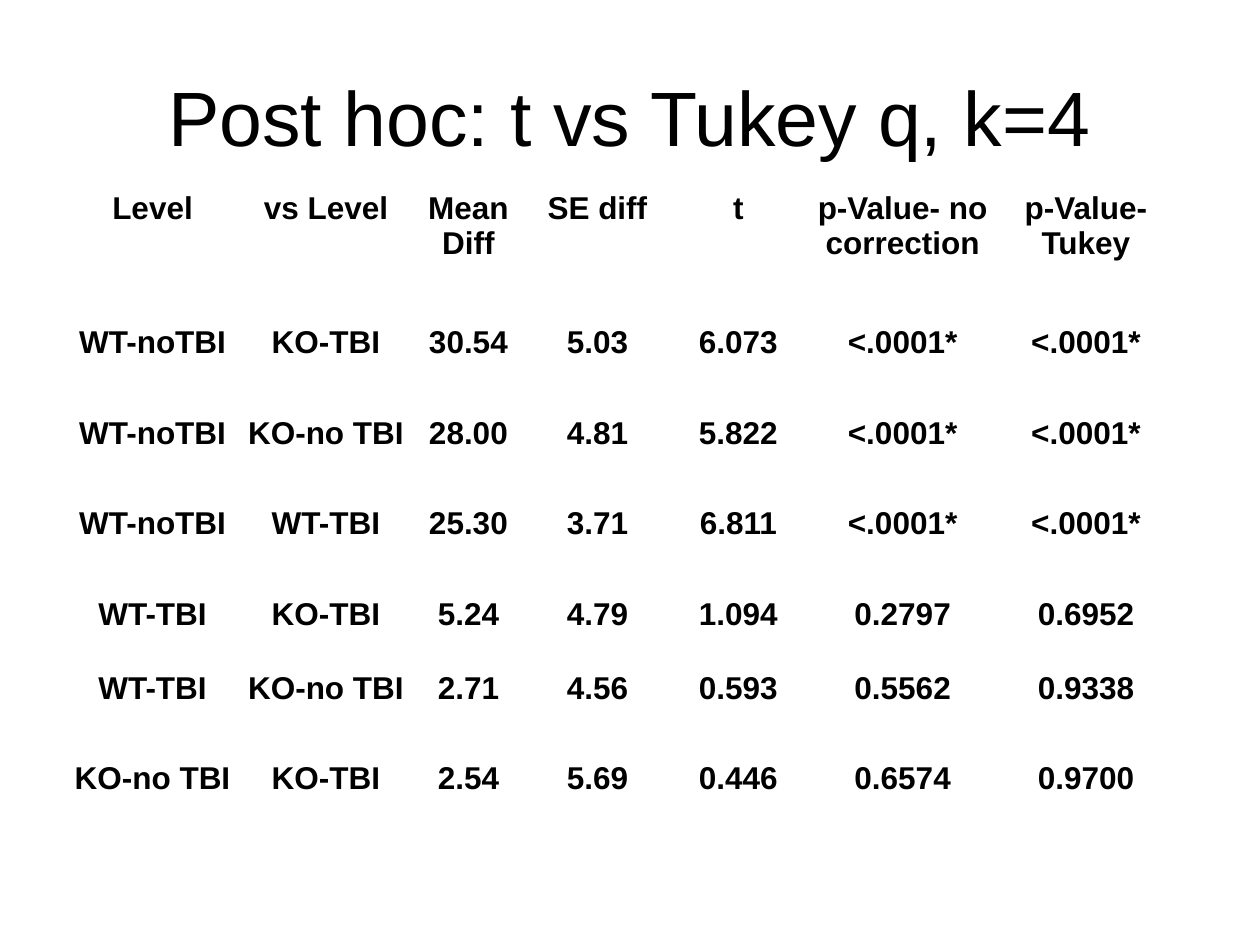
from pptx import Presentation
from pptx.dml.color import RGBColor
from pptx.enum.text import MSO_ANCHOR, PP_ALIGN
from pptx.util import Cm, Pt

BLACK = "000000"
COLUMN_WIDTHS = [3.61, 3.38, 2.36, 2.84, 2.84, 3.78, 3.61]
ROW_HEIGHTS = [2.72, 1.83, 1.83, 1.83, 1.5, 1.83, 1.83]
COMPARISONS = [
    ["Level", "vs Level", "Mean Diff", "SE diff", "t",
     "p-Value- no correction", "p-Value-Tukey"],
    ["WT-noTBI", "KO-TBI", "30.54", "5.03", "6.073", "<.0001*", "<.0001*"],
    ["WT-noTBI", "KO-no TBI", "28.00", "4.81", "5.822", "<.0001*", "<.0001*"],
    ["WT-noTBI", "WT-TBI", "25.30", "3.71", "6.811", "<.0001*", "<.0001*"],
    ["WT-TBI", "KO-TBI", "5.24", "4.79", "1.094", "0.2797", "0.6952"],
    ["WT-TBI", "KO-no TBI", "2.71", "4.56", "0.593", "0.5562", "0.9338"],
    ["KO-no TBI", "KO-TBI", "2.54", "5.69", "0.446", "0.6574", "0.9700"],
]


def color(hex_value):
    return RGBColor.from_string(hex_value)


def write_centred(text_frame, text, size, bold=False):
    text_frame.text = text
    paragraph = text_frame.paragraphs[0]
    paragraph.alignment = PP_ALIGN.CENTER
    font = paragraph.runs[0].font
    font.name = "Arial"
    font.size = Pt(size)
    font.bold = bold
    font.color.rgb = color(BLACK)


def add_title(slide, left, top, width, height):
    heading = slide.shapes.add_textbox(Cm(left), Cm(top), Cm(width), Cm(height))
    heading.text_frame.word_wrap = True
    heading.text_frame.vertical_anchor = MSO_ANCHOR.MIDDLE
    write_centred(heading.text_frame, "Post hoc: t vs Tukey q, k=4", 44)


def add_comparisons(slide, left, top, width, height):
    comparisons = slide.shapes.add_table(
        len(ROW_HEIGHTS), len(COLUMN_WIDTHS),
        Cm(left), Cm(top), Cm(width), Cm(height)).table
    comparisons.first_row = False
    comparisons.horz_banding = False

    # Columns and rows share the box in proportion
    for column, share in zip(comparisons.columns, COLUMN_WIDTHS):
        column.width = Cm(width * share / sum(COLUMN_WIDTHS))
    for row, share in zip(comparisons.rows, ROW_HEIGHTS):
        row.height = Cm(height * share / sum(ROW_HEIGHTS))

    # Unfilled cells with narrow margins
    for row, values in zip(comparisons.rows, COMPARISONS):
        for cell, value in zip(row.cells, values):
            cell.fill.background()
            cell.margin_left = cell.margin_right = cell.margin_top = Cm(0.03)
            cell.margin_bottom = 0
            write_centred(cell.text_frame, value, 18, bold=True)


def main():
    presentation = Presentation()
    presentation.slide_width = Cm(25.4)
    presentation.slide_height = Cm(19.05)
    slide = presentation.slides.add_slide(presentation.slide_layouts[6])
    add_title(slide, 1.27, 1.27, 22.86, 2.12)
    add_comparisons(slide, 1.27, 3.81, 22.43, 13.34)
    presentation.save("out.pptx")


if __name__ == "__main__":
    main()
